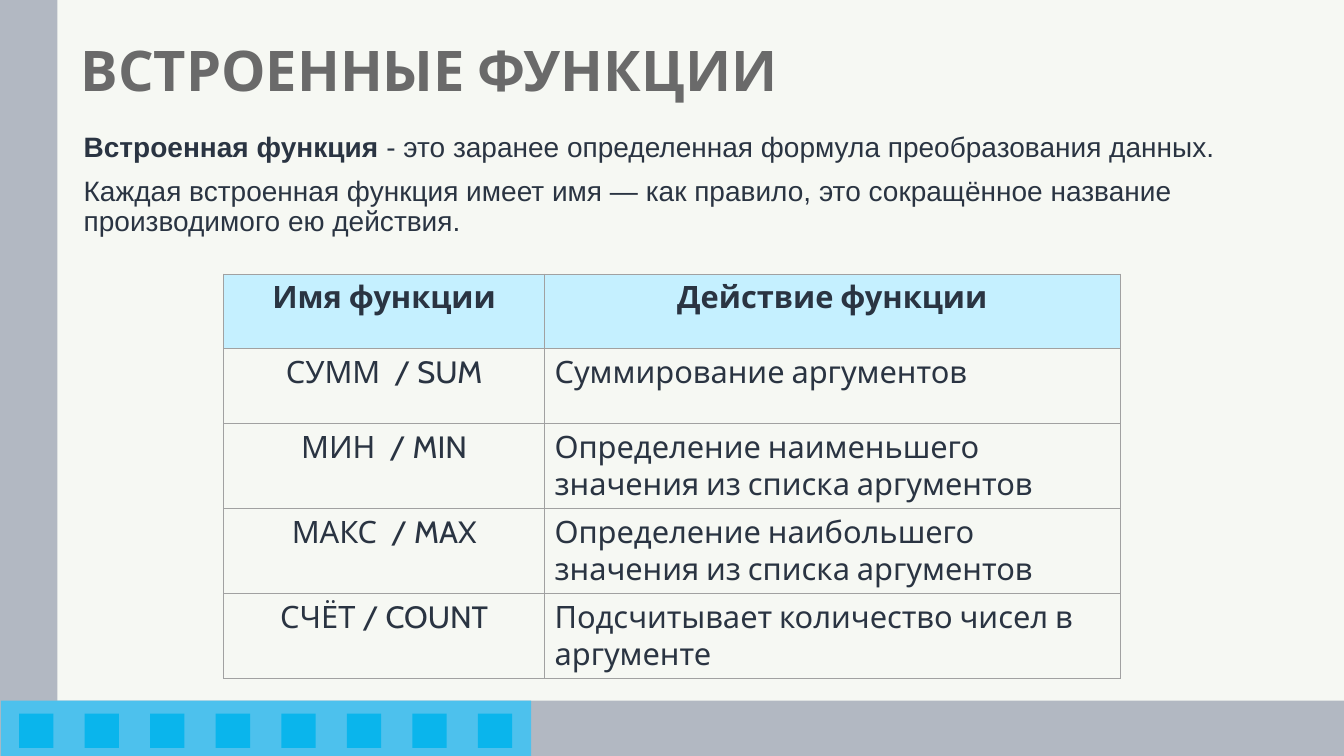
from dataclasses import dataclass

from lxml import etree
from pptx import Presentation
from pptx import util as u
from pptx.dml.color import RGBColor
from pptx.enum import shapes, text
from pptx.oxml import ns

COLORS = {
    "paper": "F6F8F3",
    "band": "B2B8C2",
    "panel": "4DC1ED",
    "square": "0AB5EC",
    "header": "C5F0FF",
    "border": "A1A1A1",
    "ink": "2A3442",
    "title": "6A6A6A",
}


@dataclass(frozen=True)
class Block:
    left: float
    top: float
    width: float
    height: float
    color: str


@dataclass(frozen=True)
class FunctionRow:
    name: str
    action: str
    height: float


BANDS = [
    Block(0, 0, 0.57, 7.5, "band"),
    Block(0, 6.95, 13.33, 0.55, "band"),
]
ORNAMENT = [Block(0.01, 6.95, 5.26, 0.57, "panel")] + [
    Block(0.19 + 0.65 * i, 7.08, 0.34, 0.34, "square") for i in range(8)
]
COLUMN_WIDTHS = (3.18, 5.71)
ROWS = [
    FunctionRow("Имя функции", "Действие функции", 0.74),
    FunctionRow("СУММ  / SUM", "Суммирование аргументов", 0.74),
    FunctionRow("МИН  / MIN", "Определение наименьшего значения из списка аргументов", 0.83),
    FunctionRow("МАКС  / MAX", "Определение наибольшего значения из списка аргументов", 0.83),
    FunctionRow("СЧЁТ / COUNT", "Подсчитывает количество чисел в аргументе", 0.83),
]
DEFINITIONS = [
    [("Встроенная функция ", True),
     ("- это заранее определенная формула преобразования данных.", False)],
    [("Каждая встроенная функция имеет имя — как правило, "
      "это сокращённое название производимого ею действия.", False)],
]


def rgb(name: str) -> RGBColor:
    return RGBColor.from_string(COLORS[name])


def set_font(font, face: str, size: float, color: str, bold: bool | None = None) -> None:
    font.name = face
    font.size = u.Pt(size)
    font.color.rgb = rgb(color)
    font.bold = bold


def place(holder, left: float, top: float, width: float, height: float) -> None:
    holder.left, holder.top = u.Inches(left), u.Inches(top)
    holder.width, holder.height = u.Inches(width), u.Inches(height)


def draw_block(container, block: Block) -> None:
    box = container.add_shape(
        shapes.MSO_SHAPE.RECTANGLE,
        u.Inches(block.left), u.Inches(block.top),
        u.Inches(block.width), u.Inches(block.height),
    )
    box.shadow.inherit = False
    box.fill.solid()
    box.fill.fore_color.rgb = rgb(block.color)
    box.line.fill.background()


def write_title(title) -> None:
    place(title, 0.56, 0, 11.88, 1.45)
    frame = title.text_frame
    frame.text = "ВСТРОЕННЫЕ ФУНКЦИИ"
    frame.auto_size = text.MSO_AUTO_SIZE.NONE
    frame.vertical_anchor = text.MSO_ANCHOR.MIDDLE
    frame.margin_left = u.Inches(0.24)
    para = frame.paragraphs[0]
    para.alignment = text.PP_ALIGN.LEFT
    para.line_spacing = 0.9
    set_font(para.font, "Cabin", 40, "title", True)


def write_body(body) -> None:
    place(body, 0.73, 1.27, 11.88, 5.78)
    frame = body.text_frame
    frame.auto_size = text.MSO_AUTO_SIZE.NONE
    for index, definition in enumerate(DEFINITIONS):
        para = frame.add_paragraph() if index else frame.paragraphs[0]
        para.line_spacing = 0.9
        para.space_before = u.Pt(10)
        set_font(para.font, "Arial", 20, "ink")
        for words, bold in definition:
            span = para.add_run()
            span.text = words
            span.font.bold = bold
        properties = para._p.get_or_add_pPr()
        properties.set("marL", "0")
        properties.set("indent", "0")
        bullet = etree.Element(ns.qn("a:buNone"))
        properties.find(ns.qn("a:spcBef")).addnext(bullet)


def draw_borders(cell) -> None:
    properties = cell._tc.get_or_add_tcPr()
    for side in ("lnL", "lnR", "lnT", "lnB"):
        line = etree.SubElement(properties, ns.qn(f"a:{side}"), w=str(u.Pt(1)))
        fill = etree.SubElement(line, ns.qn("a:solidFill"))
        etree.SubElement(fill, ns.qn("a:srgbClr"), val=COLORS["border"])


def write_cell(cell, words: str, header: bool, centered: bool) -> None:
    draw_borders(cell)
    if header:
        cell.fill.solid()
        cell.fill.fore_color.rgb = rgb("header")
    else:
        cell.fill.background()
    cell.text = words
    para = cell.text_frame.paragraphs[0]
    para.alignment = text.PP_ALIGN.CENTER if centered else text.PP_ALIGN.LEFT
    set_font(para.font, "Cabin", 22, "ink", header)


def draw_table(page) -> None:
    table = page.shapes.add_table(
        len(ROWS), len(COLUMN_WIDTHS), u.Inches(2.22), u.Inches(2.72),
        u.Inches(sum(COLUMN_WIDTHS)), u.Inches(sum(row.height for row in ROWS)),
    ).table
    table.first_row = False
    table.horz_banding = False
    for column, width in zip(table.columns, COLUMN_WIDTHS):
        column.width = u.Inches(width)
    for index, row in enumerate(ROWS):
        table.rows[index].height = u.Inches(row.height)
        header = index == 0
        write_cell(table.cell(index, 0), row.name, header, True)
        write_cell(table.cell(index, 1), row.action, header, header)


def main() -> None:
    deck = Presentation()
    deck.slide_width, deck.slide_height = u.Inches(13.33), u.Inches(7.5)
    page = deck.slides.add_slide(deck.slide_layouts[1])
    page.background.fill.solid()
    page.background.fill.fore_color.rgb = rgb("paper")
    title, body = page.placeholders
    for band in BANDS:
        draw_block(page.shapes, band)
    ornament = page.shapes.add_group_shape()
    for block in ORNAMENT:
        draw_block(ornament.shapes, block)
    write_body(body)
    page.shapes.element.append(body.element)
    draw_table(page)
    write_title(title)
    page.shapes.element.append(title.element)
    deck.save("out.pptx")


if __name__ == "__main__":
    main()
